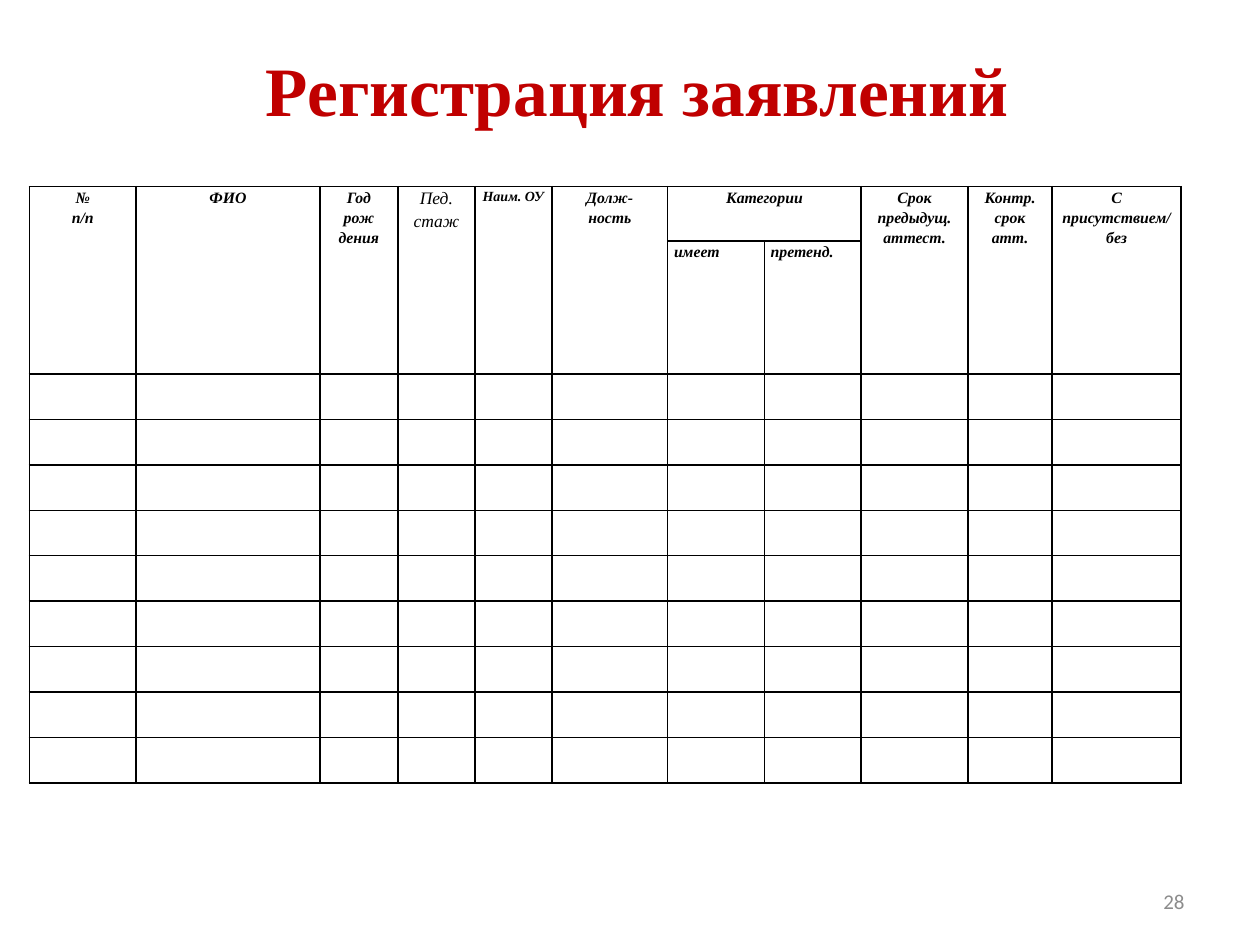
from lxml import etree
from pptx import Presentation
from pptx import util as u
from pptx.dml import color
from pptx.enum import text
from pptx.oxml import ns

COLORS = {"title": "C00000", "ink": "000000", "number": "8C8C8C"}
SERIF = "Times New Roman"
COLUMN_WIDTHS = [61, 105, 44.6, 44, 44, 66.2, 55.3, 55.3, 61, 48.2, 73.6]
HEADER_HEIGHTS = [31, 76]
ENTRY_COUNT = 9
ENTRY_HEIGHT = 26
CATEGORY_COLUMN = 6
CENTER = text.PP_ALIGN.CENTER
HEADER_FORMAT = {"name": SERIF, "size": u.Pt(9), "bold": True, "italic": True}
HEADERS = {
    0: ["№", "п/п"],
    1: ["ФИО"],
    2: ["Год", "рож", "дения"],
    3: ["Пед.", "стаж"],
    4: ["Наим. ОУ"],
    5: ["Долж-", "ность"],
    8: ["Срок предыдущ. аттест."],
    9: ["Контр.", "срок", "атт."],
    10: ["С присутствием/", "без"],
}
SPECIAL_FORMATS = {3: {"size": u.Pt(10), "bold": False}, 4: {"size": u.Pt(8)}}


def write_lines(frame, lines, color_name, font_format, **paragraph_format):
    for index, line in enumerate(lines):
        paragraph = frame.add_paragraph() if index else frame.paragraphs[0]
        for name, value in paragraph_format.items():
            setattr(paragraph, name, value)
        run = paragraph.add_run()
        run.text = line
        for name, value in font_format.items():
            setattr(run.font, name, value)
        run.font.color.rgb = color.RGBColor.from_string(COLORS[color_name])


def add_label(slide, box, line, color_name, font_format, alignment):
    shape = slide.shapes.add_textbox(*map(u.Pt, box))
    shape.text_frame.word_wrap = True
    shape.text_frame.vertical_anchor = text.MSO_ANCHOR.MIDDLE
    write_lines(shape.text_frame, [line], color_name, font_format, alignment=alignment)


def style_cell(cell):
    margins = {"margin_left": 3.6, "margin_right": 3.6, "margin_top": 0, "margin_bottom": 0}
    for name, value in margins.items():
        setattr(cell, name, u.Pt(value))
    properties = cell._tc.get_or_add_tcPr()
    for side in ("lnL", "lnR", "lnT", "lnB"):
        line = etree.SubElement(properties, ns.qn(f"a:{side}"), w=str(u.Pt(1)))
        fill = etree.SubElement(line, ns.qn("a:solidFill"))
        etree.SubElement(fill, ns.qn("a:srgbClr"), val=COLORS["ink"])
    cell.fill.background()


def write_header(cell, lines, alignment=CENTER, **changes):
    write_lines(cell.text_frame, lines, "ink", {**HEADER_FORMAT, **changes},
                alignment=alignment, line_spacing=1.15)


def add_register(slide, left, top):
    heights = HEADER_HEIGHTS + [ENTRY_HEIGHT] * ENTRY_COUNT
    box = (left, top, sum(COLUMN_WIDTHS), sum(heights))
    table = slide.shapes.add_table(len(heights), len(COLUMN_WIDTHS), *map(u.Pt, box)).table
    table.first_row = table.horz_banding = False
    for column, width in zip(table.columns, COLUMN_WIDTHS):
        column.width = u.Pt(width)
    for row, height in zip(table.rows, heights):
        row.height = u.Pt(height)
    for cell in table.iter_cells():
        style_cell(cell)

    for column, lines in HEADERS.items():
        table.cell(0, column).merge(table.cell(1, column))
        write_header(table.cell(0, column), lines, **SPECIAL_FORMATS.get(column, {}))
    categories = table.cell(0, CATEGORY_COLUMN)
    categories.merge(table.cell(0, CATEGORY_COLUMN + 1))
    write_header(categories, ["Категории"])
    for column, line in enumerate(["имеет", "претенд."], CATEGORY_COLUMN):
        write_header(table.cell(1, column), [line], text.PP_ALIGN.LEFT)


def main():
    presentation = Presentation()
    presentation.slide_width, presentation.slide_height = u.Pt(720), u.Pt(540)
    slide = presentation.slides.add_slide(presentation.slide_layouts[6])
    add_label(slide, (22.3, 17.5, 684, 66), "Регистрация заявлений", "title",
              {"name": SERIF, "size": u.Pt(39.6), "bold": True}, CENTER)
    add_register(slide, 16.8, 106.6)
    add_label(slide, (516, 500.5, 168, 28.8), "28", "number",
              {"name": "Calibri", "size": u.Pt(12)}, text.PP_ALIGN.RIGHT)
    presentation.save("out.pptx")


if __name__ == "__main__":
    main()
